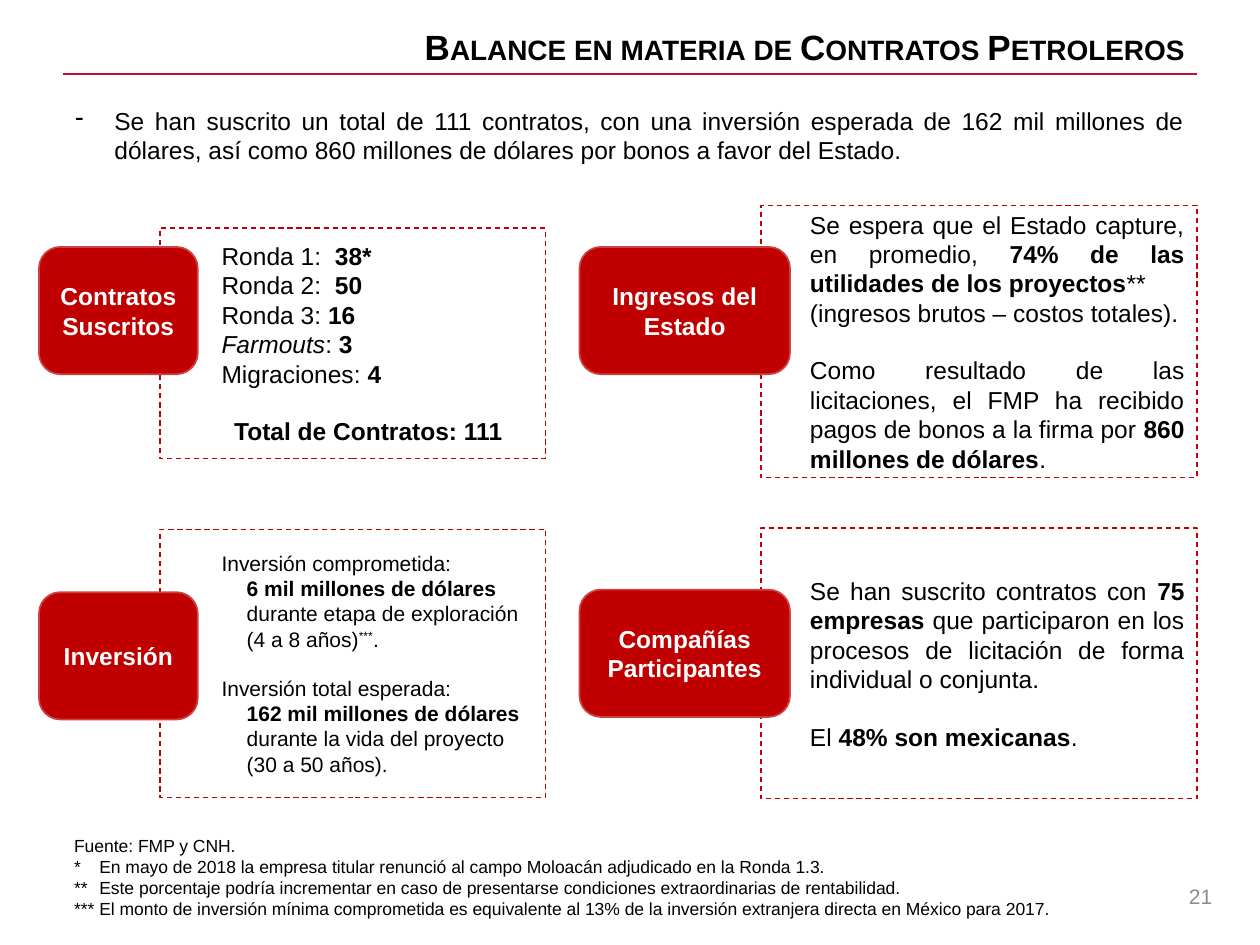
from dataclasses import dataclass

from lxml import etree
from pptx import Presentation
from pptx.dml.color import RGBColor
from pptx.enum.dml import MSO_LINE
from pptx.enum.shapes import MSO_CONNECTOR, MSO_SHAPE
from pptx.enum.text import MSO_ANCHOR, PP_ALIGN
from pptx.oxml.ns import qn
from pptx.util import Inches, Pt

LEFT, CENTER, RIGHT, JUSTIFY = PP_ALIGN.LEFT, PP_ALIGN.CENTER, PP_ALIGN.RIGHT, PP_ALIGN.JUSTIFY
TOP, MIDDLE = MSO_ANCHOR.TOP, MSO_ANCHOR.MIDDLE
RECTANGLE, ROUNDED = MSO_SHAPE.RECTANGLE, MSO_SHAPE.ROUNDED_RECTANGLE
STRAIGHT, DASH = MSO_CONNECTOR.STRAIGHT, MSO_LINE.DASH


@dataclass(frozen=True)
class Theme:
    font: str = "Arial"
    text: RGBColor = RGBColor(0, 0, 0)
    white: RGBColor = RGBColor(255, 255, 255)
    gray: RGBColor = RGBColor(0x8C, 0x8C, 0x8C)
    red: RGBColor = RGBColor(0xC0, 0, 0)
    label_edge: RGBColor = RGBColor(0xD0, 0x40, 0x40)
    rule: RGBColor = RGBColor(0xBE, 0x0F, 0x34)
    title_size: int = 20
    body_size: int = 14
    small_size: int = 12
    note_size: int = 10
    line_height: float = 1.15


THEME = Theme()

# Content: a paragraph is (runs, options); a run is text or (text, style)
TITLE = "Balance en materia de Contratos Petroleros"
PAGE_NUMBER = "21"
SUMMARY = ("Se han suscrito un total de 111 contratos, con una inversión esperada de 162 mil "
           "millones de dólares, así como 860 millones de dólares por bonos a favor del Estado.")

CONTRACTS = [([name, (count, "bold")], {"indent": 0.39}) for name, count in (
    ("Ronda 1:  ", "38*"), ("Ronda 2:  ", "50"), ("Ronda 3: ", "16"))] + [
    ([("Farmouts", "italic"), ": ", ("3", "bold")], {"indent": 0.39}),
    (["Migraciones: ", ("4", "bold")], {"indent": 0.39}),
    ([("Total de Contratos: 111", "bold")], {"indent": 0.49, "gap": True}),
]
INCOME = [
    (["Se espera que el Estado capture, en promedio, ",
      ("74% de las utilidades de los proyectos", "bold"), "**"], {"indent": 0.29}),
    (["(ingresos brutos – costos totales)."], {"indent": 0.29}),
    (["Como resultado de las licitaciones, el FMP ha recibido pagos de bonos a la firma por ",
      ("860 millones de dólares", "bold"), "."], {"indent": 0.29, "gap": True}),
]
INVESTMENT = [
    (["Inversión comprometida:"], {"indent": 0.39}),
    ([("6 mil millones de dólares ", "bold"), "durante etapa de exploración ", "\n",
      "(4 a 8 años)", ("***", "superscript"), "."], {"indent": 0.59}),
    (["Inversión total esperada:"], {"indent": 0.39, "gap": True}),
    ([("162 mil millones de dólares ", "bold"),
      "durante la vida del proyecto (30 a 50 años)."], {"indent": 0.59}),
]
COMPANIES = [
    (["Se han suscrito contratos con ", ("75 empresas ", "bold"),
      "que participaron en los procesos de licitación de forma individual o conjunta."],
     {"indent": 0.29}),
    (["El ", ("48% son mexicanas", "bold"), "."], {"indent": 0.29, "gap": True}),
]
FOOTNOTES = [(["Fuente: FMP y CNH."], {})] + [
    ([f"{mark}\t{note}"], {"indent": 0.2, "hanging": 0.2}) for mark, note in (
        ("*", "En mayo de 2018 la empresa titular renunció al campo Moloacán adjudicado en la "
              "Ronda 1.3."),
        ("**", "Este porcentaje podría incrementar en caso de presentarse condiciones "
               "extraordinarias de rentabilidad."),
        ("***", "El monto de inversión mínima comprometida es equivalente al 13% de la inversión "
                "extranjera directa en México para 2017."))]

# Panel columns: box left, box width, label left, label width
LEFT_COLUMN = (1.27, 3.06, 0.31, 1.26)
RIGHT_COLUMN = (6.04, 3.46, 4.6, 1.67)
LABEL_HEIGHT = 1.01
# Label, column, box top, box height, label top, paragraphs, size, alignment
PANELS = [
    ("Contratos Suscritos", LEFT_COLUMN, 1.81, 1.83, 1.96, CONTRACTS, THEME.body_size, JUSTIFY),
    ("Ingresos del Estado", RIGHT_COLUMN, 1.63, 2.16, 1.96, INCOME, THEME.body_size, JUSTIFY),
    ("Inversión", LEFT_COLUMN, 4.2, 2.13, 4.7, INVESTMENT, THEME.small_size, LEFT),
    ("Compañías Participantes", RIGHT_COLUMN, 4.19, 2.15, 4.68, COMPANIES, THEME.body_size,
     JUSTIFY),
]


def write(shape, paragraphs, size, alignment, color=THEME.text, bold=False, anchor=MIDDLE):
    frame = shape.text_frame
    frame.word_wrap = True
    frame.vertical_anchor = anchor
    for index, (runs, options) in enumerate(paragraphs):
        paragraph = frame.add_paragraph() if index else frame.paragraphs[0]
        paragraph.alignment = alignment
        paragraph.font.name = THEME.font
        paragraph.font.size = Pt(size)
        paragraph.font.color.rgb = color
        paragraph.font.bold = bold
        if options.get("gap"):
            paragraph.space_before = Pt(size * THEME.line_height)
        properties = paragraph._p.get_or_add_pPr()
        properties.set("marL", str(Inches(options.get("indent", 0))))
        properties.set("indent", str(-Inches(options.get("hanging", 0))))
        for item in runs:
            if item == "\n":
                paragraph.add_line_break()
                continue
            text, style = (item, None) if isinstance(item, str) else item
            run = paragraph.add_run()
            run.text = text
            if style == "bold":
                run.font.bold = True
            elif style == "italic":
                run.font.italic = True
            elif style == "superscript":
                run.font._element.set("baseline", "30000")
            elif style == "small caps":
                run.font._element.set("cap", "small")


def add_text(slide, box, *arguments, **options):
    shape = slide.shapes.add_textbox(*map(Inches, box))
    write(shape, *arguments, **options)
    return shape


def add_box(slide, kind, box, line_color, line_width):
    shape = slide.shapes.add_shape(kind, *map(Inches, box))
    shape.shadow.inherit = False
    shape.line.color.rgb = line_color
    shape.line.width = Pt(line_width)
    return shape


def add_panel(slide, label, column, top, height, label_top, paragraphs, size, alignment):
    left, width, label_left, label_width = column
    box = add_box(slide, RECTANGLE, (left, top, width, height), THEME.red, 0.75)
    box.fill.background()
    box.line.dash_style = DASH
    write(box, paragraphs, size, alignment)

    tag = add_box(slide, ROUNDED, (label_left, label_top, label_width, LABEL_HEIGHT),
                  THEME.label_edge, 1)
    tag.fill.solid()
    tag.fill.fore_color.rgb = THEME.red
    write(tag, [([label], {})], THEME.body_size, CENTER, THEME.white, bold=True)


def main():
    presentation = Presentation()
    presentation.slide_width, presentation.slide_height = Inches(10), Inches(7.5)
    slide = presentation.slides.add_slide(presentation.slide_layouts[6])

    # Title, rule and page number
    add_text(slide, (0.5, 0.15, 9, 0.44), [([(TITLE, "small caps")], {})],
             THEME.title_size, RIGHT, bold=True)
    rule = slide.shapes.add_connector(STRAIGHT, Inches(0.5), Inches(0.59),
                                      Inches(9.5), Inches(0.59))
    rule.line.color.rgb = THEME.rule
    rule.line.width = Pt(1)
    etree.SubElement(rule._element.spPr, qn("a:effectLst"))
    add_text(slide, (7.39, 6.91, 2.33, 0.4), [([PAGE_NUMBER], {})],
             THEME.small_size, RIGHT, THEME.gray)

    # Summary with a dash bullet
    summary = add_text(slide, (0.5, 0.79, 9, 0.57),
                       [([SUMMARY], {"indent": 0.31, "hanging": 0.31})],
                       THEME.body_size, JUSTIFY, anchor=TOP)
    properties = summary.text_frame.paragraphs[0]._p.pPr
    bullet = etree.Element(qn("a:buChar"), char="-")
    properties.insert(0, bullet)

    # Four labelled panels
    for panel in PANELS:
        add_panel(slide, *panel)

    # Source and footnotes
    add_text(slide, (0.49, 6.58, 8.74, 0.77), FOOTNOTES, THEME.note_size, JUSTIFY, anchor=TOP)

    presentation.save("out.pptx")


if __name__ == "__main__":
    main()
